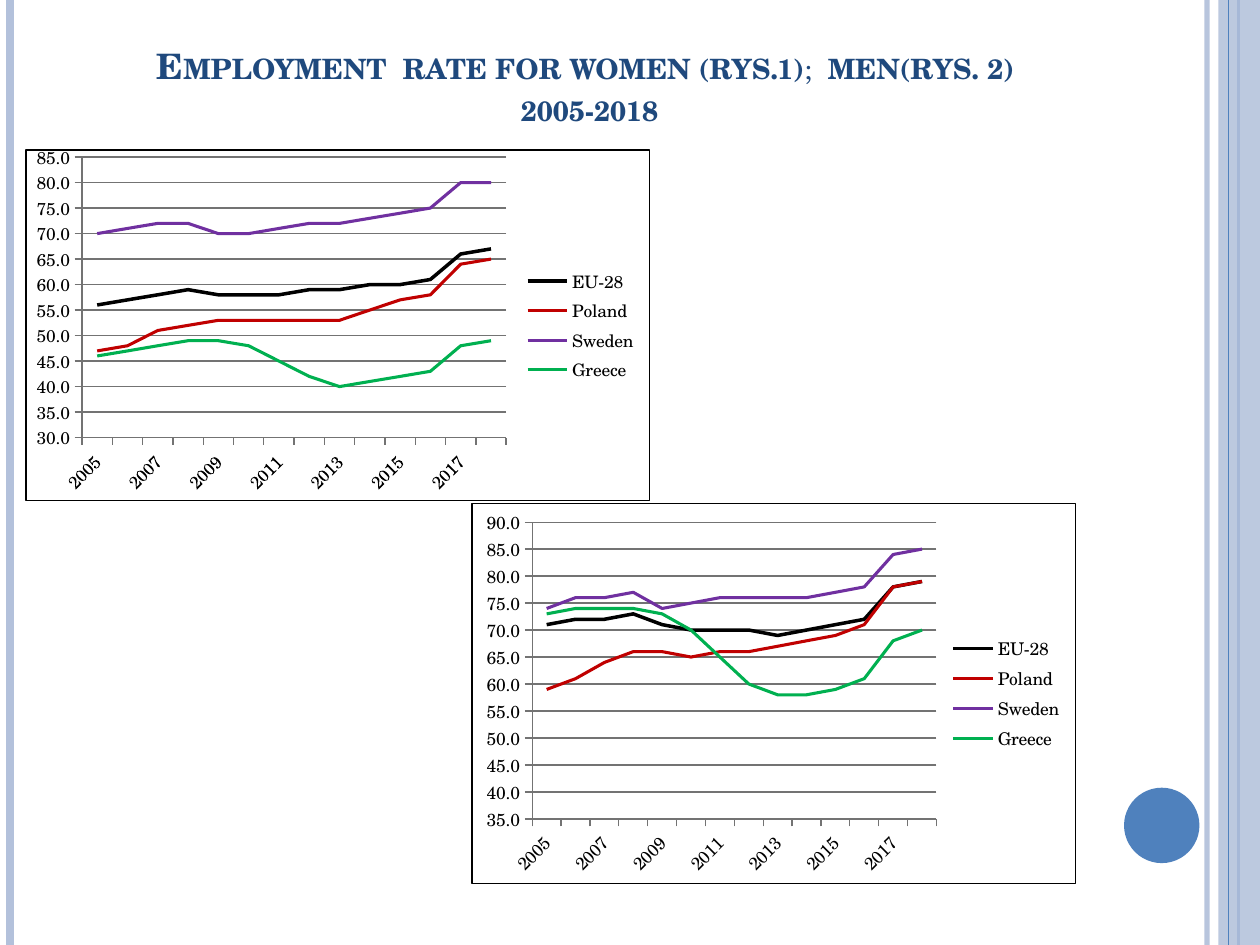
from dataclasses import dataclass

from lxml.etree import SubElement
from pptx import Presentation
from pptx.chart.chart import Chart
from pptx.chart.data import CategoryChartData
from pptx.dml.color import RGBColor
from pptx.enum.chart import XL_CHART_TYPE, XL_LEGEND_POSITION, XL_TICK_MARK
from pptx.enum.shapes import MSO_CONNECTOR, MSO_SHAPE
from pptx.enum.text import MSO_ANCHOR, PP_ALIGN
from pptx.oxml import parse_xml
from pptx.oxml.ns import nsdecls, qn
from pptx.slide import Slide
from pptx.util import Cm, Pt

FONT = "TeX Gyre Schola"
WIDE, HIGH = 25.4, 19.05
YEARS = [str(year) for year in range(2005, 2019)]
COLORS = {
    "pale": "B3C1DB",
    "blue": "4F81BD",
    "navy": "1F497D",
    "grid": "737373",
    "text": "000000",
    "EU-28": "000000",
    "Poland": "C00000",
    "Sweden": "7030A0",
    "Greece": "00B050",
}


@dataclass
class Rule:
    x: float
    color: str
    width: float
    alpha: int = 100


@dataclass
class Block:
    kind: MSO_SHAPE
    box: tuple[float, ...]
    color: str
    alpha: int = 100


@dataclass
class Graph:
    box: tuple[float, ...]
    plot: tuple[float, ...]
    low: int
    high: int
    rates: dict[str, list[int]]


DECOR = [
    Rule(24.33, "pale", 3, 93),
    Rule(0.2, "pale", 4.5),
    Rule(24.97, "blue", 1.5),
    Block(MSO_SHAPE.RECTANGLE, (24.56, 0, 0.84, HIGH), "pale", 87),
    Rule(24.77, "blue", 0.75),
    Block(MSO_SHAPE.OVAL, (22.66, 15.88, 1.52, 1.52), "blue"),
]

WOMEN = Graph((0.51, 2.92, 12.6, 7.19), (0.09, 0.02, 0.68, 0.8), 30, 85, {
    "EU-28": [56, 57, 58, 59, 58, 58, 58, 59, 59, 60, 60, 61, 66, 67],
    "Poland": [47, 48, 51, 52, 53, 53, 53, 53, 53, 55, 57, 58, 64, 65],
    "Sweden": [70, 71, 72, 72, 70, 70, 71, 72, 72, 73, 74, 75, 80, 80],
    "Greece": [46, 47, 48, 49, 49, 48, 45, 42, 40, 41, 42, 43, 48, 49],
})
MEN = Graph((9.5, 10.13, 12.19, 7.7), (0.1, 0.05, 0.67, 0.78), 35, 90, {
    "EU-28": [71, 72, 72, 73, 71, 70, 70, 70, 69, 70, 71, 72, 78, 79],
    "Poland": [59, 61, 64, 66, 66, 65, 66, 66, 67, 68, 69, 71, 78, 79],
    "Sweden": [74, 76, 76, 77, 74, 75, 76, 76, 76, 76, 77, 78, 84, 85],
    "Greece": [73, 74, 74, 74, 73, 70, 65, 60, 58, 58, 59, 61, 68, 70],
})


def tint(name: str) -> RGBColor:
    return RGBColor.from_string(COLORS[name])


def fade(shape, alpha: int) -> None:
    if alpha < 100:
        color = next(shape.element.spPr.iter(qn("a:srgbClr")))
        SubElement(color, qn("a:alpha"), val=str(alpha * 1000))


def draw_rule(slide: Slide, rule: Rule) -> None:
    line = slide.shapes.add_connector(
        MSO_CONNECTOR.STRAIGHT, Cm(rule.x), Cm(0), Cm(rule.x), Cm(HIGH))
    line.line.color.rgb = tint(rule.color)
    line.line.width = Pt(rule.width)
    fade(line, rule.alpha)
    SubElement(line.element.spPr, qn("a:effectLst"))


def draw_block(slide: Slide, block: Block) -> None:
    shape = slide.shapes.add_shape(block.kind, *map(Cm, block.box))
    shape.shadow.inherit = False
    shape.fill.solid()
    shape.fill.fore_color.rgb = tint(block.color)
    shape.line.fill.background()
    fade(shape, block.alpha)


def draw_title(slide: Slide) -> None:
    frame = slide.shapes.add_textbox(Cm(1.27), Cm(0.76), Cm(21.23), Cm(1.96)).text_frame
    frame.word_wrap = True
    frame.vertical_anchor = MSO_ANCHOR.BOTTOM
    para = frame.paragraphs[0]
    para.alignment = PP_ALIGN.CENTER
    para.text = "Employment  rate for women (rys.1)"
    para.add_run().text = ";  "
    para.add_run().text = "men(rys. 2) "
    para.add_line_break()
    para.add_run().text = "2005-2018"
    for run in para.runs:
        run.font.name = FONT
        run.font.size = Pt(20)
        run.font.bold = run.text != ";  "
        run.font.color.rgb = tint("navy")
        run.font._element.set("cap", "small")


def place_plot(chart: Chart, plot: tuple[float, ...]) -> None:
    area = chart._chartSpace.chart.plotArea
    for old in area.findall(qn("c:layout")):
        area.remove(old)
    layout = SubElement(area, qn("c:layout"))
    area.insert(0, layout)
    manual = SubElement(layout, qn("c:manualLayout"))
    parts = [("layoutTarget", "inner"), ("xMode", "edge"), ("yMode", "edge")]
    for tag, value in parts + list(zip("xywh", plot)):
        SubElement(manual, qn(f"c:{tag}"), val=str(value))


def frame_chart(chart: Chart) -> None:
    chart._chartSpace.chart.addnext(parse_xml(
        f'<c:spPr {nsdecls("c", "a")}><a:noFill/><a:ln w="{Pt(0.75)}"><a:solidFill>'
        f'<a:srgbClr val="{COLORS["text"]}"/></a:solidFill></a:ln></c:spPr>'))


def draw_graph(slide: Slide, graph: Graph) -> None:
    data = CategoryChartData(number_format="#,##0.0")
    data.categories = YEARS
    for name, rates in graph.rates.items():
        data.add_series(name, rates)
    chart = slide.shapes.add_chart(XL_CHART_TYPE.LINE, *map(Cm, graph.box), data).chart
    chart.font.name = FONT
    chart.font.size = Pt(10)
    chart.font.color.rgb = tint("text")
    chart.has_title = False
    chart.has_legend = True
    chart.legend.position = XL_LEGEND_POSITION.RIGHT
    chart.legend.include_in_layout = False
    chart.plots[0].vary_by_categories = False
    for line in chart.plots[0].series:
        line.smooth = False
        line.format.line.color.rgb = tint(line.name)
        line.format.line.width = Pt(2 if line.name == "EU-28" else 1.75)

    years, scale = chart.category_axis, chart.value_axis
    for axis in (years, scale):
        axis.major_tick_mark = XL_TICK_MARK.OUTSIDE
        axis.format.line.color.rgb = tint("grid")
        axis.tick_labels.font.size = Pt(10)
    years._element.txPr.bodyPr.set("rot", "-2700000")
    scale.minimum_scale, scale.maximum_scale = graph.low, graph.high
    scale.major_unit = 5
    scale.major_gridlines.format.line.color.rgb = tint("grid")
    scale.tick_labels.number_format = "#,##0.0"
    scale.tick_labels.number_format_is_linked = False
    place_plot(chart, graph.plot)
    frame_chart(chart)


def main() -> None:
    deck = Presentation()
    deck.slide_width, deck.slide_height = Cm(WIDE), Cm(HIGH)
    slide = deck.slides.add_slide(deck.slide_layouts[6])
    for item in DECOR:
        if isinstance(item, Rule):
            draw_rule(slide, item)
        else:
            draw_block(slide, item)
    draw_title(slide)
    for graph in (WOMEN, MEN):
        draw_graph(slide, graph)
    deck.save("out.pptx")


if __name__ == "__main__":
    main()
